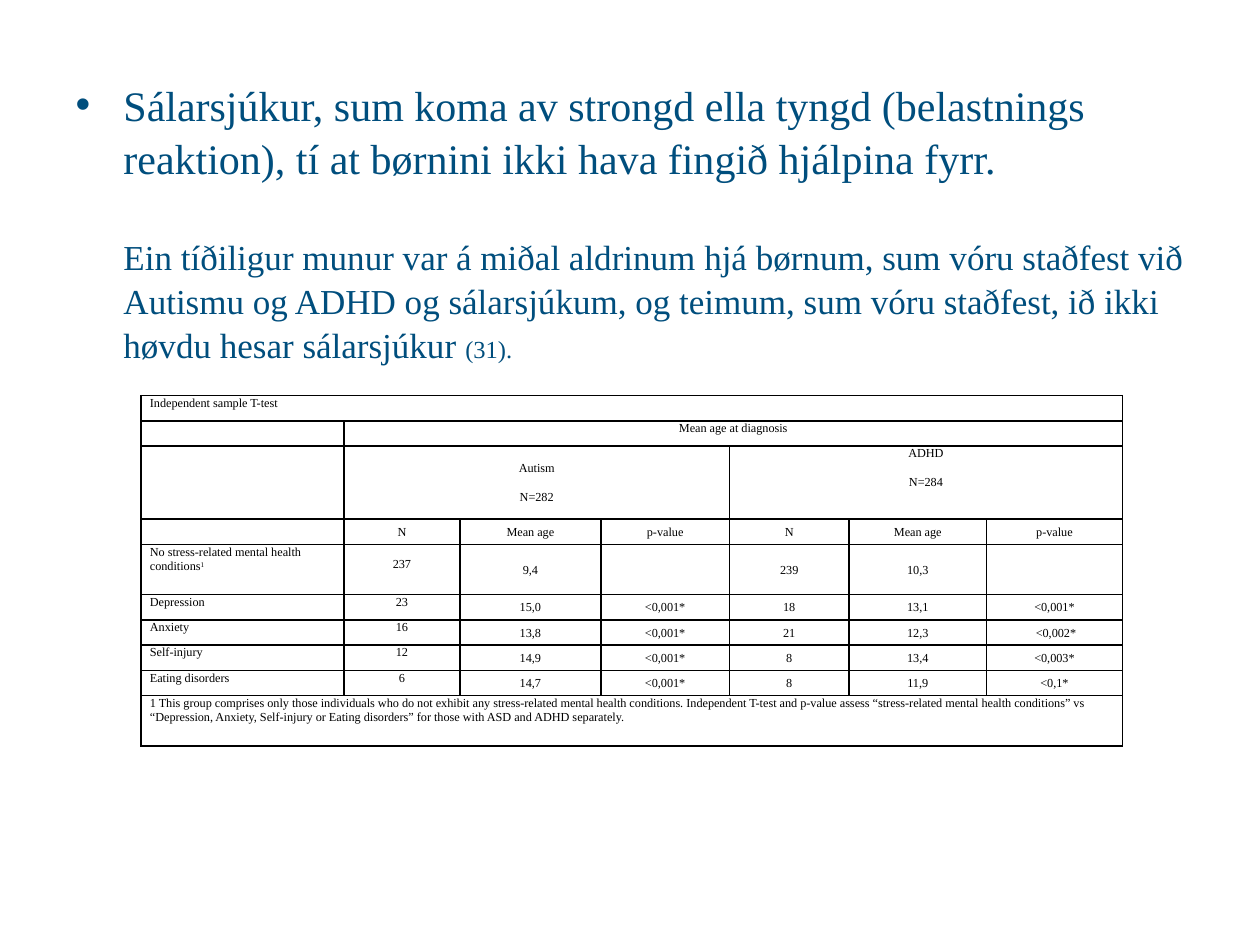
from dataclasses import dataclass

from lxml.etree import SubElement
from pptx import Presentation
from pptx.dml.color import RGBColor
from pptx.enum.text import MSO_ANCHOR, MSO_AUTO_SIZE, PP_ALIGN
from pptx.oxml import parse_xml
from pptx.oxml.ns import nsdecls, qn
from pptx.util import Inches, Pt


@dataclass(frozen=True)
class Theme:
    font: str = "Times New Roman"
    blue: str = "004E7D"
    black: str = "000000"
    heading: int = 24
    body: int = 20
    reference: int = 14
    table: int = 7
    border: int = 1


THEME = Theme()
COLUMN_WIDTHS = [1.61, 0.92, 1.12, 1.02, 0.95, 1.09, 1.08]
ROW_HEIGHTS = [0.2, 0.2, 0.58, 0.2, 0.4, 0.2, 0.2, 0.2, 0.2, 0.4]
MEASURES = ["N", "Mean age", "p-value"]
FIRST_DATA_ROW = 4
CONDITIONS = [
    ["No stress-related mental health conditions", "237", "9,4", "", "239", "10,3", ""],
    ["Depression", "23", "15,0", "<0,001*", "18", "13,1", "<0,001*"],
    ["Anxiety", "16", "13,8", "<0,001*", "21", "12,3", " <0,002*"],
    ["Self-injury", "12", "14,9", "<0,001*", "8", "13,4", "<0,003*"],
    ["Eating disorders", "6", "14,7", "<0,001*", "8", "11,9", "<0,1*"],
]
FOOTNOTE = (
    "1 This group comprises only those individuals who do not exhibit any "
    "stress-related mental health conditions. Independent T-test and p-value assess "
    "“stress-related mental health conditions” vs “Depression, Anxiety, Self-injury "
    "or Eating disorders” for those with ASD and ADHD separately."
)


def apply_format(target, values):
    for name, value in values.items():
        setattr(target, name, value)


def add_span(para, text, size, color):
    span = para.add_run()
    span.text = text
    apply_format(span.font, {"name": THEME.font, "size": Pt(size), "bold": False})
    span.font.color.rgb = RGBColor.from_string(color)
    return span


def set_bullet(para, character, hanging):
    """Indent the paragraph; without a character it has no bullet."""
    properties = para._p.get_or_add_pPr()
    properties.set("marL", str(Inches(0.38)))
    properties.set("indent", str(-Inches(0.38) if hanging else 0))
    if character:
        SubElement(properties, qn("a:buFont"), typeface="Arial")
        SubElement(properties, qn("a:buChar"), char=character)
    else:
        SubElement(properties, qn("a:buNone"))


def fill_title(title):
    apply_format(title, {"left": Inches(0.5), "top": Inches(0.57),
                         "width": Inches(9), "height": Inches(2.37)})
    frame = title.text_frame
    apply_format(frame, {"word_wrap": True, "auto_size": MSO_AUTO_SIZE.NONE,
                         "vertical_anchor": MSO_ANCHOR.MIDDLE})
    finding, detail = frame.paragraphs[0], frame.add_paragraph()
    for para, bullet, gap in ((finding, "•", 0), (detail, None, 29)):
        set_bullet(para, bullet, hanging=bool(bullet))
        apply_format(para, {"alignment": PP_ALIGN.LEFT, "line_spacing": 1.05,
                            "space_before": Pt(gap)})
    add_span(finding, "Sálarsjúkur, sum koma av strongd ella tyngd (belastnings reaktion), "
             "tí at børnini ikki hava fingið hjálpina fyrr.", THEME.heading, THEME.blue)
    add_span(detail, "Ein tíðiligur munur var á miðal aldrinum hjá børnum, sum vóru staðfest "
             "við Autismu og ADHD og sálarsjúkum, og teimum, sum vóru staðfest, ið ikki "
             "høvdu hesar sálarsjúkur ", THEME.body, THEME.blue)
    add_span(detail, "(31).", THEME.reference, THEME.blue)


def set_borders(cell):
    properties = cell._tc.get_or_add_tcPr()
    for position, side in enumerate(("lnL", "lnR", "lnT", "lnB")):
        properties.insert(position, parse_xml(
            f'<a:{side} {nsdecls("a")} w="{Pt(THEME.border)}"><a:solidFill>'
            f'<a:srgbClr val="{THEME.black}"/></a:solidFill></a:{side}>'))


def prepare_cell(cell):
    apply_format(cell, {"margin_left": Inches(0.07), "margin_right": Inches(0.07),
                        "margin_top": 0, "margin_bottom": 0})
    cell.fill.background()
    set_borders(cell)
    ending = cell.text_frame.paragraphs[0]._p.get_or_add_endParaRPr()
    ending.set("sz", str(THEME.table * 100))


def write_cell(cell, *lines, align=PP_ALIGN.CENTER, anchor=MSO_ANCHOR.MIDDLE):
    cell.vertical_anchor = anchor
    frame = cell.text_frame
    for number, line in enumerate(lines):
        para = frame.add_paragraph() if number else frame.paragraphs[0]
        apply_format(para, {"alignment": align, "line_spacing": 1.07, "space_after": Pt(8)})
        if line:
            add_span(para, line, THEME.table, THEME.black)


def write_headings(table):
    last = len(COLUMN_WIDTHS) - 1
    note = len(ROW_HEIGHTS) - 1
    for row, first, end in ((0, 0, last), (1, 1, last), (2, 1, 3), (2, 4, last), (note, 0, last)):
        table.cell(row, first).merge(table.cell(row, end))
    top = {"anchor": MSO_ANCHOR.TOP}
    top_left = {"align": PP_ALIGN.LEFT, **top}
    write_cell(table.cell(0, 0), "Independent sample T-test", **top_left)
    write_cell(table.cell(1, 1), "Mean age at diagnosis", **top)
    write_cell(table.cell(2, 1), "Autism", "N=282")
    write_cell(table.cell(2, 4), "ADHD", "N=284", **top)
    for column, label in enumerate(MEASURES * 2, start=1):
        write_cell(table.cell(3, column), label)
    write_cell(table.cell(note, 0), FOOTNOTE, **top_left)


def write_conditions(table):
    for row, values in enumerate(CONDITIONS, start=FIRST_DATA_ROW):
        for column, value in enumerate(values):
            write_cell(table.cell(row, column), value,
                       align=PP_ALIGN.CENTER if column else PP_ALIGN.LEFT,
                       anchor=MSO_ANCHOR.MIDDLE if column > 1 else MSO_ANCHOR.TOP)
    label, count = (table.cell(FIRST_DATA_ROW, column).text_frame.paragraphs[0]
                    for column in (0, 1))
    mark = add_span(label, "1", THEME.table, THEME.black)
    mark.font._element.set("baseline", "30000")
    count.line_spacing = 2.0


def add_results_table(page):
    frame = page.shapes.add_table(len(ROW_HEIGHTS), len(COLUMN_WIDTHS), Inches(1.12),
                                  Inches(3.14), Inches(sum(COLUMN_WIDTHS)),
                                  Inches(sum(ROW_HEIGHTS)))
    table = frame.table
    apply_format(table, {"first_row": False, "horz_banding": False})
    for column, width in zip(table.columns, COLUMN_WIDTHS):
        column.width = Inches(width)
    for row, height in zip(table.rows, ROW_HEIGHTS):
        row.height = Inches(height)
    for cell in table.iter_cells():
        prepare_cell(cell)
    write_headings(table)
    write_conditions(table)


def main():
    deck = Presentation()
    apply_format(deck, {"slide_width": Inches(10), "slide_height": Inches(7.5)})
    page = deck.slides.add_slide(deck.slide_layouts[5])
    fill_title(page.shapes.title)
    add_results_table(page)
    deck.save("out.pptx")


if __name__ == "__main__":
    main()
